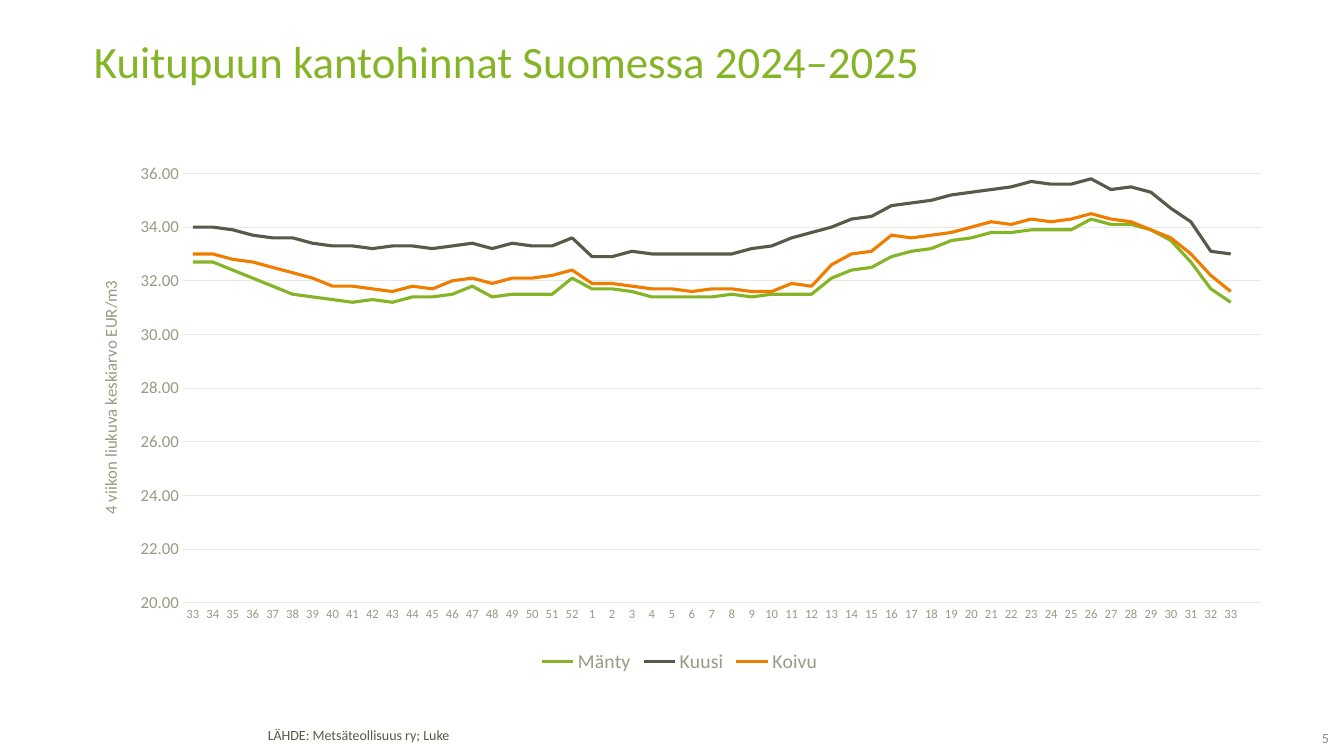
"""Build a slide with a line chart of pulpwood stumpage prices."""
from dataclasses import dataclass

from pptx import Presentation
from pptx.chart.data import CategoryChartData
from pptx.dml.color import RGBColor
from pptx.enum.chart import XL_CHART_TYPE, XL_LEGEND_POSITION, XL_TICK_MARK
from pptx.enum.text import MSO_ANCHOR, PP_ALIGN
from pptx.oxml import parse_xml
from pptx.oxml.ns import nsdecls, qn
from pptx.util import Inches, Pt

COLS, ROWS = 160, 90


@dataclass(frozen=True)
class Theme:
    """Colours and type sizes of the slide."""
    face: str = "Calibri"
    green: str = "85B526"
    dark: str = "59594A"
    orange: str = "EF7D00"
    label: str = "999984"
    grid: str = "E7E7E3"
    number: str = "878787"
    title: int = 32
    legend: int = 14
    axis: int = 12
    note: int = 10
    week: int = 9


THEME = Theme()

WEEKS = [str(week) for week in (*range(33, 53), *range(1, 34))] + [""]

PRICES = {
    "Mänty": (THEME.green, [
        32.7, 32.7, 32.4, 32.1, 31.8, 31.5, 31.4, 31.3, 31.2, 31.3, 31.2,
        31.4, 31.4, 31.5, 31.8, 31.4, 31.5, 31.5, 31.5, 32.1, 31.7, 31.7,
        31.6, 31.4, 31.4, 31.4, 31.4, 31.5, 31.4, 31.5, 31.5, 31.5, 32.1,
        32.4, 32.5, 32.9, 33.1, 33.2, 33.5, 33.6, 33.8, 33.8, 33.9, 33.9,
        33.9, 34.3, 34.1, 34.1, 33.9, 33.5, 32.7, 31.7, 31.2, None]),
    "Kuusi": (THEME.dark, [
        34, 34, 33.9, 33.7, 33.6, 33.6, 33.4, 33.3, 33.3, 33.2, 33.3,
        33.3, 33.2, 33.3, 33.4, 33.2, 33.4, 33.3, 33.3, 33.6, 32.9, 32.9,
        33.1, 33, 33, 33, 33, 33, 33.2, 33.3, 33.6, 33.8, 34,
        34.3, 34.4, 34.8, 34.9, 35, 35.2, 35.3, 35.4, 35.5, 35.7, 35.6,
        35.6, 35.8, 35.4, 35.5, 35.3, 34.7, 34.2, 33.1, 33, None]),
    "Koivu": (THEME.orange, [
        33, 33, 32.8, 32.7, 32.5, 32.3, 32.1, 31.8, 31.8, 31.7, 31.6,
        31.8, 31.7, 32, 32.1, 31.9, 32.1, 32.1, 32.2, 32.4, 31.9, 31.9,
        31.8, 31.7, 31.7, 31.6, 31.7, 31.7, 31.6, 31.6, 31.9, 31.8, 32.6,
        33, 33.1, 33.7, 33.6, 33.7, 33.8, 34, 34.2, 34.1, 34.3, 34.2,
        34.3, 34.5, 34.3, 34.2, 33.9, 33.6, 33, 32.2, 31.6, None]),
}


def cells(*box):
    """Turn grid columns and rows into lengths, twelve to the inch."""
    return [Inches(part / 12) for part in box]


def style(font, size, color):
    """Set face, size and colour of a font."""
    font.name, font.size, font.bold = THEME.face, Pt(size), False
    font.color.rgb = RGBColor.from_string(color)


def stroke(line, color, width):
    """Set colour and width of a line."""
    line.color.rgb = RGBColor.from_string(color)
    line.width = Pt(width)


def label(slide, box, text, size, color, spacing=1.0):
    """Place one line of text in a box and return its frame."""
    frame = slide.shapes.add_textbox(*cells(*box)).text_frame
    frame.word_wrap = True
    frame.text = text
    para = frame.paragraphs[0]
    para.line_spacing = spacing
    style(para.runs[0].font, size, color)
    return frame


def number(slide, box, text):
    """Place the page number, right-aligned and centred in height."""
    frame = label(slide, box, text, THEME.note, THEME.number)
    frame.margin_left = frame.margin_right = frame.margin_top = 0
    frame.margin_bottom = Inches(0.04)
    frame.vertical_anchor = MSO_ANCHOR.MIDDLE
    frame.paragraphs[0].alignment = PP_ALIGN.RIGHT


def pin(holder, index, **shares):
    """Give a chart part a fixed place, in shares of the chart."""
    old = holder.find(qn("c:layout"))
    if old is not None:
        holder.remove(old)
    target = '<c:layoutTarget val="inner"/>' if "w" in shares else ""
    modes = "".join(f'<c:{key}Mode val="edge"/>' for key in "xy")
    sizes = "".join(f'<c:{key} val="{val}"/>' for key, val in shares.items())
    holder.insert(index, parse_xml(
        f'<c:layout {nsdecls("c")}><c:manualLayout>{target}{modes}{sizes}'
        '</c:manualLayout></c:layout>'))


def axes(chart):
    """Format the week axis and the price axis."""
    weeks, price = chart.category_axis, chart.value_axis
    for axis, size in ((weeks, THEME.week), (price, THEME.axis)):
        axis.major_tick_mark = axis.minor_tick_mark = XL_TICK_MARK.NONE
        style(axis.tick_labels.font, size, THEME.label)
    stroke(weeks.format.line, THEME.grid, 0.75)
    price.format.line.fill.background()
    price.minimum_scale, price.maximum_scale, price.major_unit = 20, 36, 2
    price.has_major_gridlines = True
    stroke(price.major_gridlines.format.line, THEME.grid, 0.75)
    price.tick_labels.number_format = "#,##0.00"
    price.tick_labels.number_format_is_linked = False
    frame = price.axis_title.text_frame
    frame.text = "4 viikon liukuva keskiarvo EUR/m3"
    style(frame.paragraphs[0].runs[0].font, THEME.axis, THEME.label)
    body = price.axis_title._element.find(".//" + qn("a:bodyPr"))
    body.set("rot", "-5400000")
    body.set("vert", "horz")
    pin(price.axis_title._element, 1, x=0.01, y=0.23)


def graph(slide, box):
    """Place the price chart in a box."""
    data = CategoryChartData(number_format="0.0")
    data.categories = WEEKS
    for name, (_, values) in PRICES.items():
        data.add_series(name, values)
    chart = slide.shapes.add_chart(XL_CHART_TYPE.LINE, *cells(*box), data).chart
    style(chart.font, THEME.note, THEME.dark)
    chart.has_title = False
    chart.has_legend = True
    chart.legend.position = XL_LEGEND_POSITION.BOTTOM
    chart.legend.include_in_layout = False
    style(chart.legend.font, THEME.legend, THEME.label)
    plot = chart.plots[0]
    plot.vary_by_categories = False
    for series, (color, _) in zip(plot.series, PRICES.values()):
        series.smooth = False
        stroke(series.format.line, color, 2.25)
    axes(chart)
    area = chart._chartSpace.find(".//" + qn("c:plotArea"))
    pin(area, 0, x=0.083, y=0.03, w=0.905, h=0.826)


def main():
    """Build and save the slide."""
    deck = Presentation()
    deck.slide_width, deck.slide_height = cells(COLS, ROWS)
    slide = deck.slides.add_slide(deck.slide_layouts[6])
    label(slide, (30.7, 86.2, 86.2, 3.2), "LÄHDE: Metsäteollisuus ry; Luke",
          THEME.note, THEME.dark, 0.85)
    number(slide, (151.8, 86.9, 6.4, 2.3), "5")
    label(slide, (10, 4.7, 140.3, 11.8),
          "Kuitupuun kantohinnat Suomessa 2024–2025",
          THEME.title, THEME.green, 0.8)
    graph(slide, (10, 18.8, 141.8, 61.9))
    deck.save("out.pptx")


if __name__ == "__main__":
    main()
